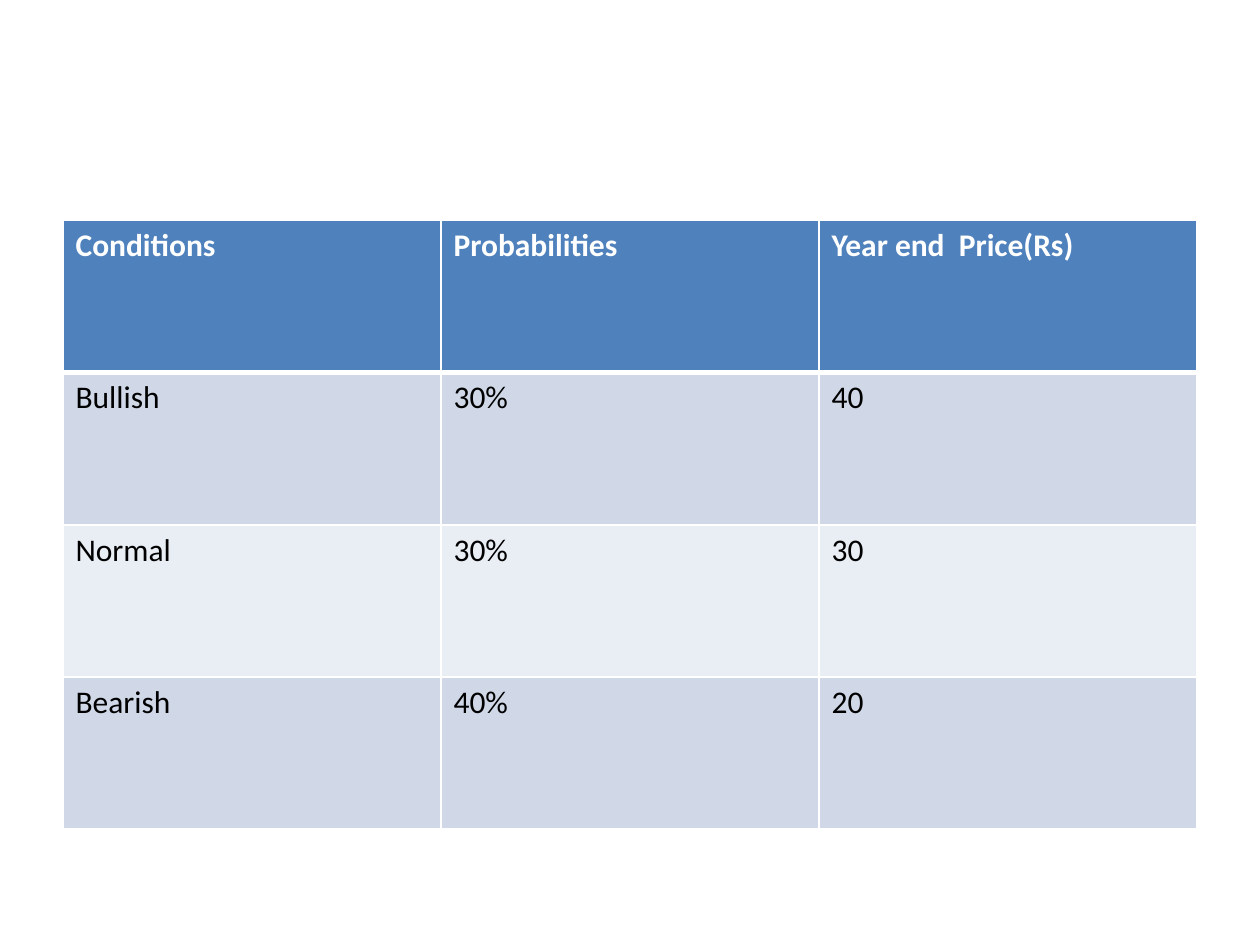
"""Build a slide with a table of market conditions, probabilities and year-end prices."""
from lxml import etree
from pptx import Presentation
from pptx.dml.color import RGBColor
from pptx.oxml.ns import qn
from pptx.util import Inches, Pt

BLANK_LAYOUT = 6
WHITE, BLACK = "FFFFFF", "000000"
HEADER_FILL = "4F81BD"
BAND_FILLS = ["E9EDF4", "D0D8E8"]
ROWS = [
    ["Conditions", "Probabilities", "Year end  Price(Rs)"],
    ["Bullish", "30%", "40"],
    ["Normal", "30%", "30"],
    ["Bearish", "40%", "20"],
]


def color(value):
    return RGBColor.from_string(value)


def add_border(cell, side, points):
    properties = cell._tc.get_or_add_tcPr()
    line = etree.SubElement(properties, qn(f"a:ln{side}"), w=str(Pt(points)))
    fill = etree.SubElement(line, qn("a:solidFill"))
    etree.SubElement(fill, qn("a:srgbClr"), val=WHITE)


deck = Presentation()
deck.slide_width, deck.slide_height = Inches(10), Inches(7.5)
page = deck.slides.add_slide(deck.slide_layouts[BLANK_LAYOUT])

table = page.shapes.add_table(
    len(ROWS), len(ROWS[0]), Inches(0.5), Inches(1.75), Inches(9), Inches(4.83)
).table

for row_index, texts in enumerate(ROWS):
    header = row_index == 0
    widths = {"L": 1, "R": 1, "T": 3 if row_index == 1 else 1, "B": 3 if header else 1}
    text_format = {"name": "Calibri", "size": Pt(18), "bold": header}
    for column_index, text in enumerate(texts):
        cell = table.cell(row_index, column_index)
        for side, points in widths.items():
            add_border(cell, side, points)
        cell.fill.solid()
        cell.fill.fore_color.rgb = color(HEADER_FILL if header else BAND_FILLS[row_index % 2])
        span = cell.text_frame.paragraphs[0].add_run()
        span.text = text
        for name, value in text_format.items():
            setattr(span.font, name, value)
        span.font.color.rgb = color(WHITE if header else BLACK)

deck.save("out.pptx")
